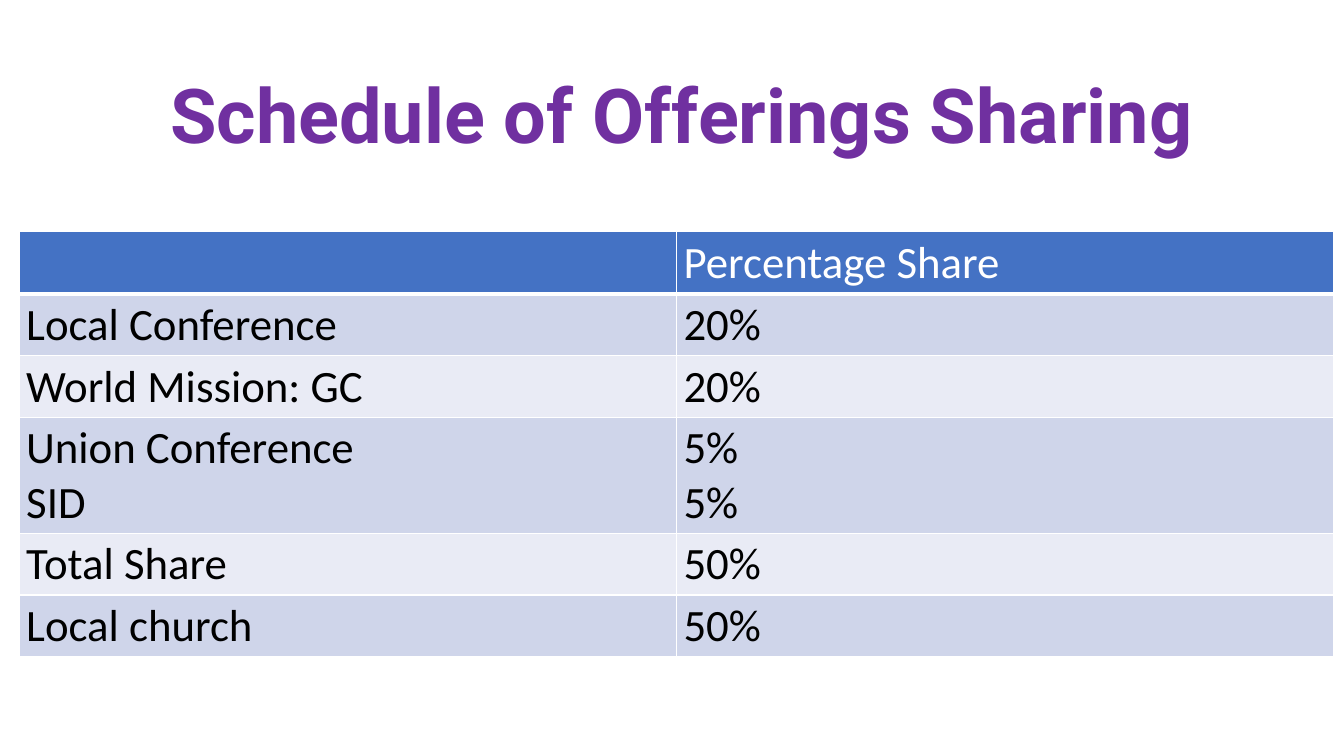
from dataclasses import dataclass

from lxml.etree import SubElement
from pptx import Presentation
from pptx.dml.color import RGBColor
from pptx.enum.text import MSO_ANCHOR, PP_ALIGN
from pptx.oxml.ns import qn
from pptx.slide import Slide
from pptx.table import _Cell as Cell
from pptx.util import Inches, Pt


@dataclass(frozen=True)
class Theme:
    """Colours, fonts and type sizes of the slide."""
    title: str = "7030A0"
    header: str = "4472C4"
    bands: tuple[str, str] = ("CFD5EA", "E9EBF5")
    white: str = "FFFFFF"
    black: str = "000000"
    title_font: str = "Roboto"
    body_font: str = "Calibri"
    title_size: int = 54
    body_size: int = 32
    rule: int = 1
    header_rule: int = 3


@dataclass(frozen=True)
class ShareRow:
    """One table row, with its label, share and height in inches."""
    label: str
    share: str
    height: float = 0.61


THEME = Theme()
COLUMN_WIDTH = 6.52
ROWS = [
    ShareRow("", "Percentage Share"),
    ShareRow("Local Conference", "20%"),
    ShareRow("World Mission: GC", "20%"),
    ShareRow("Union Conference\nSID", "5%\n5%", 1.15),
    ShareRow("Total Share", "50%"),
    ShareRow("Local church", "50%"),
]


def add_title(page: Slide, text: str) -> None:
    """Add the centred title."""
    box = page.shapes.add_textbox(Inches(0.19), Inches(-0.05), Inches(13.14), Inches(1.68))
    frame = box.text_frame
    frame.word_wrap = True
    frame.vertical_anchor = MSO_ANCHOR.BOTTOM
    para = frame.paragraphs[0]
    para.text = text
    para.alignment = PP_ALIGN.CENTER
    para.line_spacing = 0.9
    para.font.name = THEME.title_font
    para.font.size = Pt(THEME.title_size)
    para.font.bold = True
    para.font.color.rgb = RGBColor.from_string(THEME.title)


def set_borders(cell: Cell, bottom: int) -> None:
    """Draw white borders round a cell."""
    properties = cell._tc.get_or_add_tcPr()
    widths = {"L": THEME.rule, "R": THEME.rule, "T": THEME.rule, "B": bottom}
    for index, (side, width) in enumerate(widths.items()):
        line = SubElement(properties, qn(f"a:ln{side}"), w=str(Pt(width)))
        fill = SubElement(line, qn("a:solidFill"))
        SubElement(fill, qn("a:srgbClr"), val=THEME.white)
        properties.insert(index, line)


def fill_cell(cell: Cell, text: str, fill: str, ink: str, bottom: int) -> None:
    """Write and style one table cell."""
    cell.text = text
    cell.margin_left = cell.margin_right = Inches(0.07)
    cell.margin_top = cell.margin_bottom = Inches(0.04)
    cell.fill.solid()
    cell.fill.fore_color.rgb = RGBColor.from_string(fill)
    for para in cell.text_frame.paragraphs:
        para.font.name = THEME.body_font
        para.font.size = Pt(THEME.body_size)
        para.font.bold = False
        para.font.color.rgb = RGBColor.from_string(ink)
    set_borders(cell, bottom)


def add_share_table(page: Slide, rows: list[ShareRow]) -> None:
    """Add the banded table of shares."""
    height = sum(row.height for row in rows)
    table = page.shapes.add_table(
        len(rows), 2, Inches(0.19), Inches(2.3), Inches(2 * COLUMN_WIDTH), Inches(height)
    ).table
    for index, row in enumerate(rows):
        table.rows[index].height = Inches(row.height)
        if index == 0:
            style = (THEME.header, THEME.white, THEME.header_rule)
        else:
            style = (THEME.bands[(index - 1) % 2], THEME.black, THEME.rule)
        for column, text in enumerate((row.label, row.share)):
            fill_cell(table.cell(index, column), text, *style)


def main() -> None:
    """Build and save the slide."""
    deck = Presentation()
    deck.slide_width, deck.slide_height = Inches(13.33), Inches(7.5)
    page = deck.slides.add_slide(deck.slide_layouts[6])
    add_title(page, "Schedule of Offerings Sharing")
    add_share_table(page, ROWS)
    deck.save("out.pptx")


if __name__ == "__main__":
    main()
